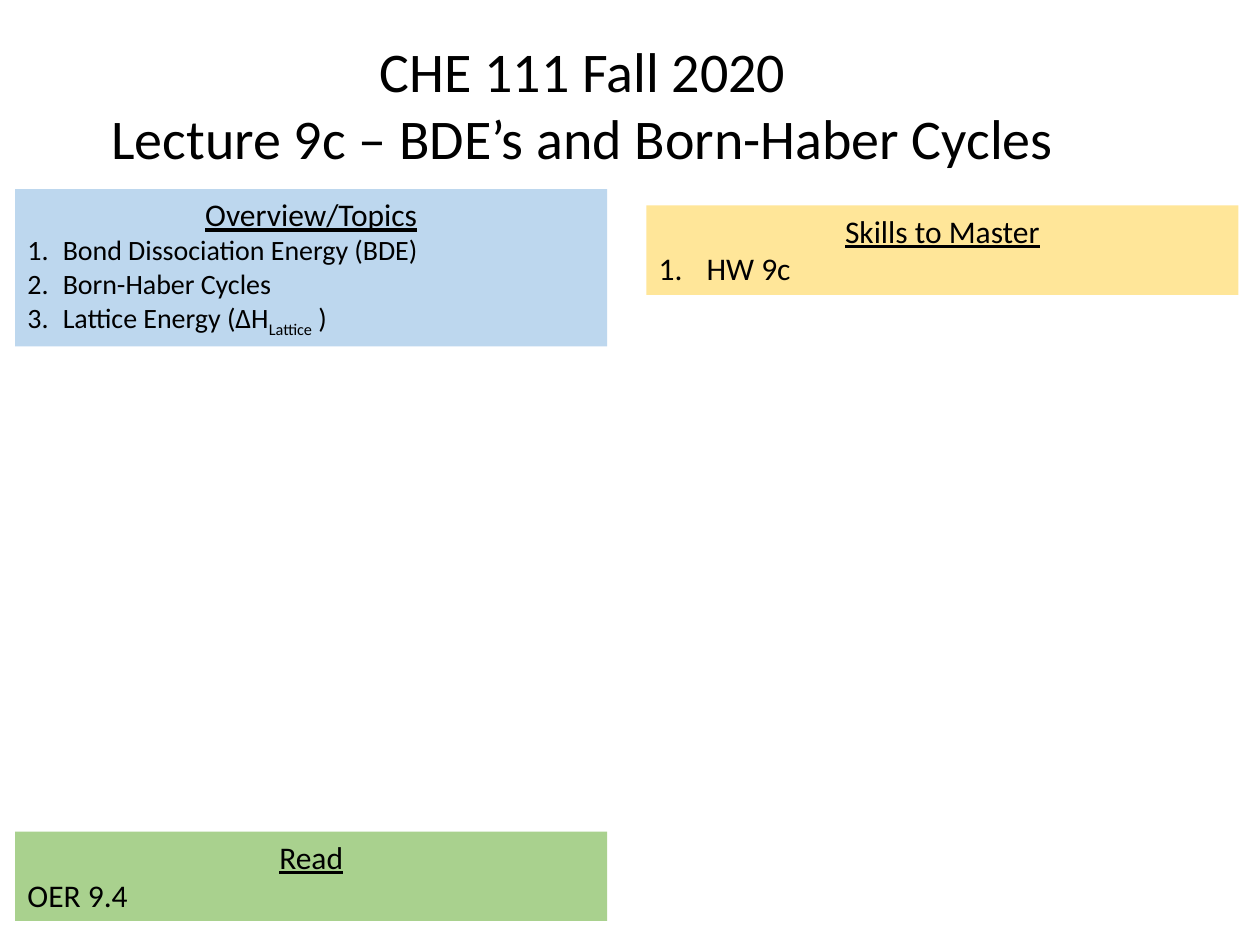
from lxml import etree
from pptx import Presentation
from pptx.dml.color import RGBColor
from pptx.enum import text
from pptx.oxml.ns import qn
from pptx.util import Inches, Pt

BLACK = RGBColor(0, 0, 0)
BLUE = RGBColor(0xBD, 0xD7, 0xEE)
GOLD = RGBColor(0xFF, 0xE6, 0x99)
GREEN = RGBColor(0xA9, 0xD1, 0x8E)

TITLE = ["CHE 111 Fall 2020", "Lecture 9c – BDE’s and Born-Haber Cycles"]
TOPICS = [
    ["Bond Dissociation Energy (BDE)"],
    ["Born-Haber Cycles"],
    ["Lattice Energy (ΔH", "Lattice", " )"],
]
COLS = (0.12, 5.13)
WIDE = 4.7
BOXES = [
    dict(head="Overview/Topics", rows=TOPICS, col=0, top=1.5, high=1.25,
         fill=BLUE, size=16, dent=0.28),
    dict(head="Skills to Master", rows=[["HW 9c"]], col=1, top=1.63, high=0.71,
         fill=GOLD, size=18, dent=0.38),
    dict(head="Read", rows=[["OER 9.4"]], col=0, top=6.6, high=0.71,
         fill=GREEN, size=18, dent=0),
]


def style(para, size, align=text.PP_ALIGN.LEFT):
    para.alignment = align
    font = para.font
    font.name, font.size, font.color.rgb = "Calibri", Pt(size), BLACK


def number(para, dent):
    props = para._p.get_or_add_pPr()
    props.set("marL", str(Inches(dent)))
    props.set("indent", str(-Inches(dent)))
    mark = etree.Element(qn("a:buAutoNum"), type="arabicPeriod")
    props.insert(0, mark)


def place(shape, left, top, width, height):
    shape.left, shape.top = Inches(left), Inches(top)
    shape.width, shape.height = Inches(width), Inches(height)


def panel(slide, box):
    shape = slide.shapes.add_textbox(0, 0, 0, 0)
    place(shape, COLS[box["col"]], box["top"], WIDE, box["high"])
    shape.fill.solid()
    shape.fill.fore_color.rgb = box["fill"]
    frame = shape.text_frame
    frame.word_wrap = True
    head = frame.paragraphs[0]
    run = head.add_run()
    run.text = box["head"]
    run.font.underline = True
    style(head, 18, text.PP_ALIGN.CENTER)
    for row in box["rows"]:
        para = frame.add_paragraph()
        for i, part in enumerate(row):
            run = para.add_run()
            run.text = part
            if i == 1:
                run._r.get_or_add_rPr().set("baseline", "-25000")
        style(para, box["size"])
        if box["dent"]:
            number(para, box["dent"])


def main():
    deck = Presentation()
    deck.slide_width, deck.slide_height = Inches(10), Inches(7.5)
    slide = deck.slides.add_slide(deck.slide_layouts[5])
    title = slide.shapes.title
    place(title, 0.75, 0.23, 7.75, 1.18)
    frame = title.text_frame
    frame.text = "\n".join(TITLE)
    frame.word_wrap = False
    frame.auto_size = text.MSO_AUTO_SIZE.NONE
    for para in frame.paragraphs:
        style(para, 32, text.PP_ALIGN.CENTER)
    for box in BOXES:
        panel(slide, box)
    deck.save("out.pptx")


if __name__ == "__main__":
    main()
